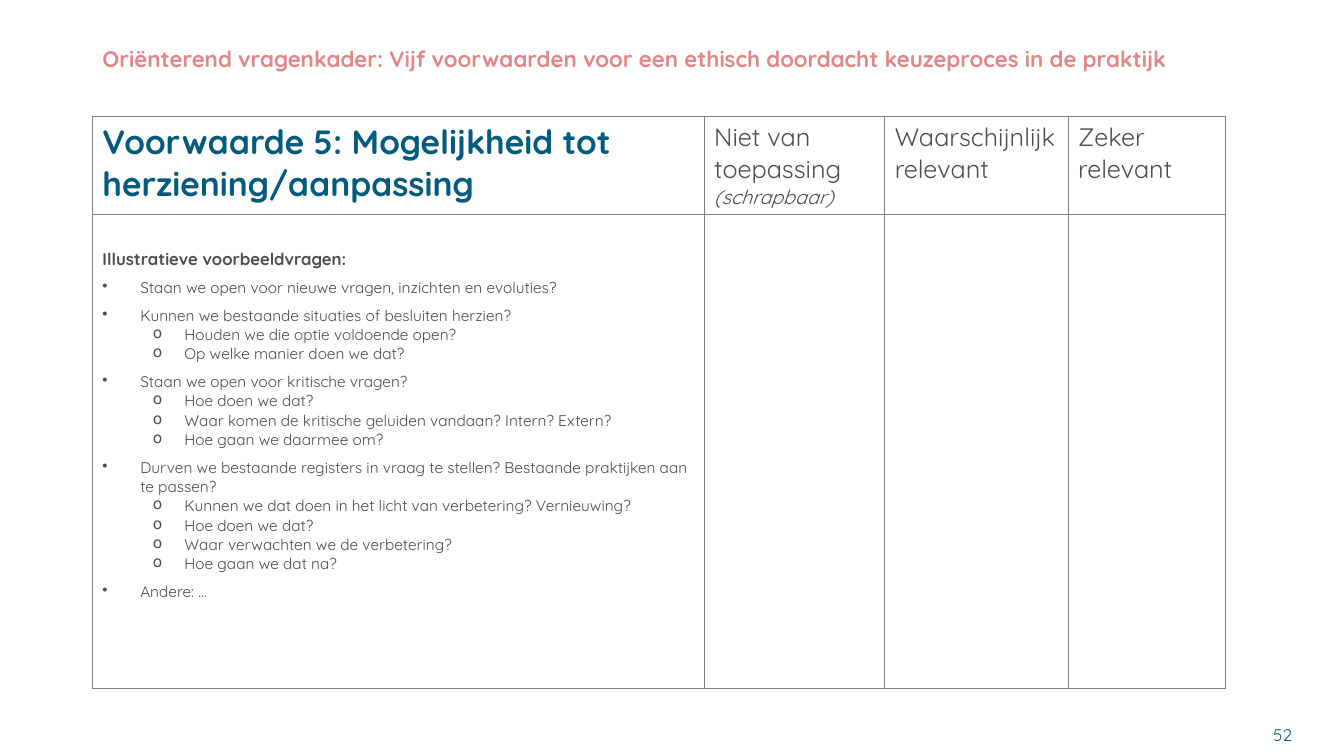
from lxml import etree
from pptx import Presentation
from pptx.dml.color import RGBColor
from pptx.enum import text
from pptx.oxml import ns
from pptx.util import Pt

FONT = "Quicksand"
PINK = RGBColor(0xE2, 0x86, 0x86)
TEAL = RGBColor(0x00, 0x5B, 0x7F)
GREY = RGBColor(0x4D, 0x4D, 0x4D)
BORDER = RGBColor(0x80, 0x80, 0x80)

TITLE = ("Oriënterend vragenkader: Vijf voorwaarden voor een ethisch "
         "doordacht keuzeproces in de praktijk")
CONDITION = "Voorwaarde 5: Mogelijkheid tot herziening/aanpassing"
RATINGS = ["Niet van toepassing", "Waarschijnlijk relevant", "Zeker relevant"]
QUESTIONS = [
    ("Staan we open voor nieuwe vragen, inzichten en evoluties?", []),
    ("Kunnen we bestaande situaties of besluiten herzien?", [
        "Houden we die optie voldoende open?",
        "Op welke manier doen we dat?"]),
    ("Staan we open voor kritische vragen?", [
        "Hoe doen we dat?",
        "Waar komen de kritische geluiden vandaan? Intern? Extern?",
        "Hoe gaan we daarmee om?"]),
    ("Durven we bestaande registers in vraag te stellen? "
     "Bestaande praktijken aan te passen?", [
         "Kunnen we dat doen in het licht van verbetering? Vernieuwing?",
         "Hoe doen we dat?",
         "Waar verwachten we de verbetering?",
         "Hoe gaan we dat na?"]),
    ("Andere: …", []),
]


def place(shape, left, top, width, height):
    shape.left, shape.top = Pt(left), Pt(top)
    shape.width, shape.height = Pt(width), Pt(height)


def write(paragraph, words, size, color=GREY, bold=False, italic=False):
    paragraph.text = words
    font = paragraph.font
    font.name, font.size, font.bold, font.italic = FONT, Pt(size), bold, italic
    font.color.rgb = color


def add_bullet(paragraph, character, margin, hanging):
    properties = paragraph._p.get_or_add_pPr()
    properties.set("marL", str(Pt(margin)))
    properties.set("indent", str(-Pt(hanging)))
    etree.SubElement(properties, ns.qn("a:buChar"), char=character)


def outline_cell(cell):
    """Remove the cell's fill and draw a thin line on all four sides."""
    cell.fill.background()
    properties = cell._tc.get_or_add_tcPr()
    for position, side in enumerate(("lnL", "lnR", "lnT", "lnB")):
        line = etree.Element(ns.qn(f"a:{side}"), w=str(Pt(0.5)))
        fill = etree.SubElement(line, ns.qn("a:solidFill"))
        etree.SubElement(fill, ns.qn("a:srgbClr"), val=str(BORDER))
        properties.insert(position, line)


def add_title(slide, left, top, width, height):
    title = slide.shapes.title
    place(title, left, top, width, height)
    frame = title.text_frame
    frame.word_wrap = True
    frame.auto_size = text.MSO_AUTO_SIZE.NONE
    frame.vertical_anchor = text.MSO_ANCHOR.MIDDLE
    paragraph = frame.paragraphs[0]
    paragraph.alignment = text.PP_ALIGN.LEFT
    paragraph.line_spacing = 0.9
    write(paragraph, TITLE, 16, PINK, bold=True)


def fill_header(cells):
    write(cells[0].text_frame.paragraphs[0], CONDITION, 24, TEAL, bold=True)
    for cell, rating in zip(cells[1:], RATINGS):
        write(cell.text_frame.paragraphs[0], rating, 18)
    write(cells[1].text_frame.add_paragraph(), "(schrapbaar)", 14, italic=True)


def fill_questions(cell):
    cell.margin_top = Pt(24.6)
    frame = cell.text_frame
    write(frame.paragraphs[0], "Illustratieve voorbeeldvragen:", 12, bold=True)
    for question, follow_ups in QUESTIONS:
        paragraph = frame.add_paragraph()
        add_bullet(paragraph, "•", 27, 27)
        paragraph.space_before = Pt(6)
        write(paragraph, question, 11)
        for follow_up in follow_ups:
            paragraph = frame.add_paragraph()
            paragraph.level = 1
            add_bullet(paragraph, "o", 58.5, 22.5)
            write(paragraph, follow_up, 11)


def add_question_table(slide, left, top, column_widths, row_heights):
    table = slide.shapes.add_table(
        len(row_heights), len(column_widths), Pt(left), Pt(top),
        Pt(sum(column_widths)), Pt(sum(row_heights))).table
    table.first_row = table.horz_banding = False
    for column, width in zip(table.columns, column_widths):
        column.width = Pt(width)
    for row, height in zip(table.rows, row_heights):
        row.height = Pt(height)
    for cell in table.iter_cells():
        outline_cell(cell)
    fill_header(list(table.rows[0].cells))
    fill_questions(table.cell(1, 0))


def add_page_number(slide, left, top, width, height):
    box = slide.shapes.add_textbox(Pt(left), Pt(top), Pt(width), Pt(height))
    frame = box.text_frame
    frame.word_wrap = True
    frame.vertical_anchor = text.MSO_ANCHOR.MIDDLE
    paragraph = frame.paragraphs[0]
    paragraph.alignment = text.PP_ALIGN.RIGHT
    write(paragraph, "52", 12, TEAL)


def main():
    presentation = Presentation()
    presentation.slide_width, presentation.slide_height = Pt(960), Pt(540)
    slide = presentation.slides.add_slide(presentation.slide_layouts[5])
    add_title(slide, 66, 28.5, 809, 29)
    add_question_table(slide, 66, 83, [437, 129, 131, 112], [70, 339])
    add_page_number(slide, 714, 510, 216, 29)
    presentation.save("out.pptx")


if __name__ == "__main__":
    main()
